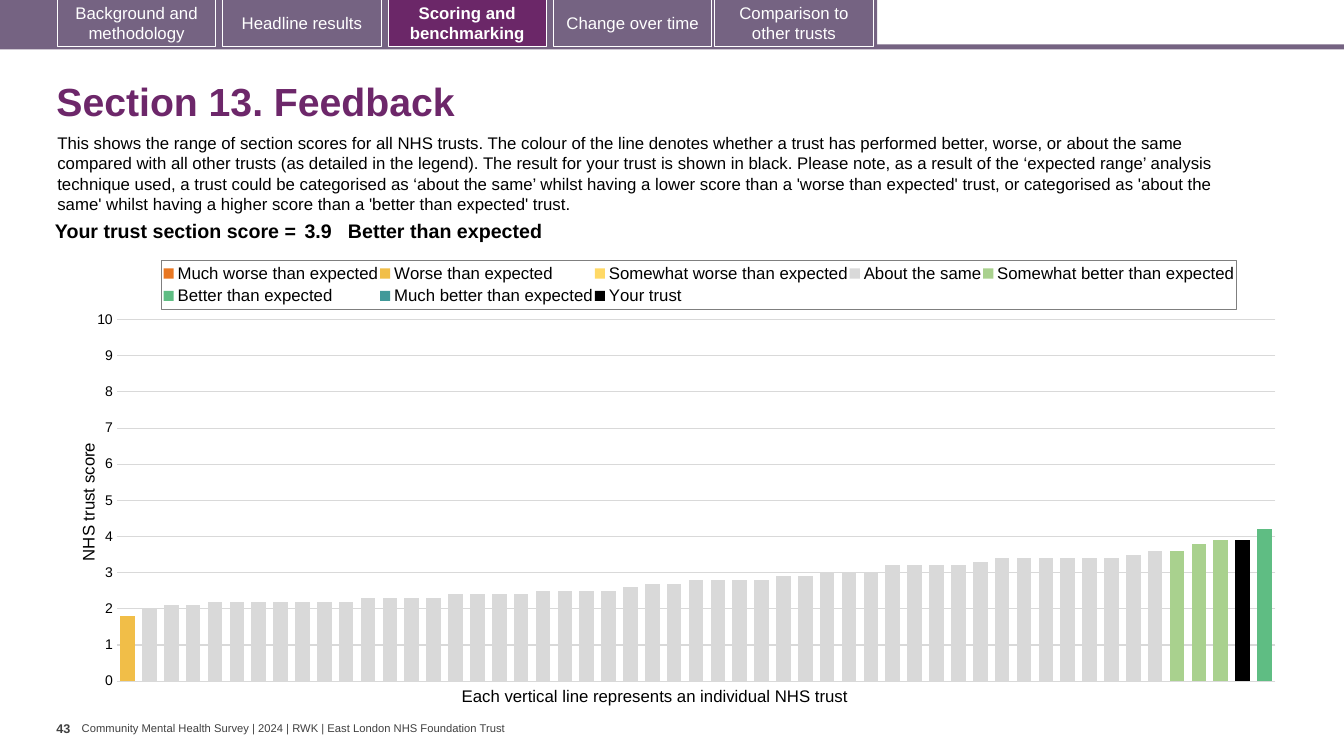
import copy
import pptx
import pptx.chart.data
import pptx.dml.color
import pptx.enum.chart
import pptx.enum.shapes
import pptx.enum.text
import pptx.oxml
import pptx.oxml.ns
import pptx.util

RGB = pptx.dml.color.RGBColor
QN = pptx.oxml.ns.qn
PT = pptx.util.Pt
ALIGN = pptx.enum.text.PP_ALIGN
MID = pptx.enum.text.MSO_ANCHOR.MIDDLE
XL = pptx.enum.chart

BLACK, WHITE, GREY = RGB(0, 0, 0), RGB(255, 255, 255), RGB(0x40, 0x40, 0x40)
BAR, LIVE, HEAD = RGB(0x75, 0x63, 0x82), RGB(0x6B, 0x27, 0x68), RGB(0x6D, 0x27, 0x6A)
GRID = RGB(0xD9, 0xD9, 0xD9)

# Content
TITLE = "Section 13. Feedback"
INTRO = (
    "This shows the range of section scores for all NHS trusts. The colour of the line denotes "
    "whether a trust has performed better, worse, or about the same compared with all other trusts "
    "(as detailed in the legend). The result for your trust is shown in black. Please note, as a "
    "result of the ‘expected range’ analysis technique used, a trust could be categorised as "
    "‘about the same’ whilst having a lower score than a 'worse than expected' trust, or categorised "
    "as 'about the same' whilst having a higher score than a 'better than expected' trust.")
AXIS = "NHS trust score"
NOTE = "Each vertical line represents an individual NHS trust"
PAGE = "43"
FOOT = "Community Mental Health Survey | 2024 | RWK | East London NHS Foundation Trust"
ACTIVE = "Scoring and benchmarking"
# Tab label, left edge
TABS = [("Background and methodology", 4.28), ("Headline results", 16.58), (ACTIVE, 28.88),
        ("Change over time", 41.19), ("Comparison to other trusts", 53.19)]
# Text, column width, alignment, side margin in inches
SCORE = [("Your trust section score =", 19.73, ALIGN.RIGHT, 0.04),
         ("3.9", 3.53, ALIGN.LEFT, 0.04),
         ("Better than expected", 64.44, ALIGN.LEFT, 0)]
COUNT = 53
SAME = ([2] + [2.1] * 2 + [2.2] * 7 + [2.3] * 4 + [2.4] * 4 + [2.5] * 4 + [2.6] + [2.7] * 2
        + [2.8] * 4 + [2.9] * 2 + [3] * 3 + [3.2] * 4 + [3.3] + [3.4] * 6 + [3.5, 3.6])
# Series name, colour, rank of its first trust, scores
SERIES = [("Much worse than expected", RGB(0xE8, 0x77, 0x22), 0, []),
          ("Worse than expected", RGB(0xF1, 0xBE, 0x48), 0, [1.8]),
          ("Somewhat worse than expected", RGB(0xFF, 0xD9, 0x66), 0, []),
          ("About the same", GRID, 1, SAME),
          ("Somewhat better than expected", RGB(0xA9, 0xD1, 0x8E), 48, [3.6, 3.8, 3.9]),
          ("Better than expected", RGB(0x5F, 0xBD, 0x83), 51, [3.9, 4.2]),
          ("Much better than expected", RGB(0x41, 0x99, 0x99), 0, []),
          ("Your trust", BLACK, 51, [3.9])]

deck = pptx.Presentation()
deck.slide_width, deck.slide_height = pptx.util.Inches(13.33), pptx.util.Inches(7.5)
slide = deck.slides.add_slide(deck.slide_layouts[5])
shapes = slide.shapes


def across(share):
    return int(deck.slide_width * share / 100)


def place(x, y, w, h):
    """Percent shares of the slide to lengths."""
    return (across(x), int(deck.slide_height * y / 100),
            across(w), int(deck.slide_height * h / 100))


def style(font, size, color, bold=False):
    font.name, font.size, font.bold = "Arial", PT(size), bold
    font.color.rgb = color


def rect(spot, fill):
    shape = shapes.add_shape(pptx.enum.shapes.MSO_SHAPE.RECTANGLE, *place(*spot))
    shape.shadow.inherit = False
    shape.fill.solid()
    shape.fill.fore_color.rgb = fill
    shape.line.fill.background()
    return shape


def label(spot, text, size, color, bold=False, wrap=False, inset=None):
    frame = shapes.add_textbox(*place(*spot)).text_frame
    frame.word_wrap = wrap
    if inset is not None:
        frame.margin_left = frame.margin_right = 0
        frame.margin_top = frame.margin_bottom = pptx.util.Inches(inset)
    para = frame.paragraphs[0]
    para.text = text
    style(para.font, size, color, bold)
    return frame


# Title
title = shapes.title
title.left, title.top, title.width, title.height = place(3.45, 8.93, 93.7, 9.6)
title.text_frame.text = TITLE
title.text_frame.vertical_anchor = MID
para = title.text_frame.paragraphs[0]
para.alignment, para.line_spacing = ALIGN.LEFT, 0.9
style(para.font, 28, HEAD, True)

# Navigation tabs
rect((0, 5.87, 100, 0.67), BAR)
rect((0, 0, 65.27, 6.27), BAR)
for text, left in TABS:
    live = text == ACTIVE
    tab = rect((left, -0.13, 11.78, 6.27), LIVE if live else BAR)
    tab.line.color.rgb, tab.line.width = WHITE, PT(0.75)
    frame = tab.text_frame
    frame.word_wrap, frame.vertical_anchor = True, MID
    para = frame.paragraphs[0]
    para.text, para.alignment = text, ALIGN.CENTER
    style(para.font, 12, WHITE, live)

# Chart
data = pptx.chart.data.CategoryChartData()
data.categories = [str(n + 1) for n in range(COUNT)]
for name, _, first, vals in SERIES:
    data.add_series(name, [None] * first + vals + [None] * (COUNT - first - len(vals)))
chart = shapes.add_chart(XL.XL_CHART_TYPE.COLUMN_CLUSTERED,
                         *place(5.03, 32.93, 91.15, 59.2), data).chart
chart.has_title = False
chart.font.name, chart.font.size = "Calibri", PT(10)
chart.font.color.rgb = BLACK
plot = chart.plots[0]
plot.gap_width, plot.overlap, plot.vary_by_categories = 50, 100, False
for item, (_, color, _, _) in zip(plot.series, SERIES):
    item.format.fill.solid()
    item.format.fill.fore_color.rgb = color
    item.invert_if_negative = False

chart.category_axis.visible = False
axis = chart.value_axis
axis.minimum_scale, axis.maximum_scale, axis.major_unit = 0, 10, 1
axis.major_tick_mark = axis.minor_tick_mark = XL.XL_TICK_MARK.NONE
axis.format.line.fill.background()
axis.major_gridlines.format.line.color.rgb = GRID
axis.major_gridlines.format.line.width = PT(0.75)
axis.tick_labels.number_format, axis.tick_labels.number_format_is_linked = "0", False
style(axis.tick_labels.font, 10, BLACK)
axis.axis_title.text_frame.text = AXIS
style(axis.axis_title.text_frame.paragraphs[0].font, 12, BLACK)

chart.has_legend = True
legend = chart.legend
legend.position, legend.include_in_layout = XL.XL_LEGEND_POSITION.TOP, False
style(legend.font, 12, BLACK)

# Legend border and manual layouts
NS = pptx.oxml.ns.nsdecls("c", "a")
root = chart._chartSpace
area, key = (root.find(".//" + QN(tag)) for tag in ("c:plotArea", "c:legend"))
key.find(QN("c:overlay")).addnext(pptx.oxml.parse_xml(
    f'<c:spPr {NS}><a:ln w="9525"><a:solidFill><a:srgbClr val="7F7F7F"/></a:solidFill></a:ln></c:spPr>'))


def layout(owner, index, target="", **sizes):
    for old in owner.findall(QN("c:layout")):
        owner.remove(old)
    tags = [("layoutTarget", target)] if target else []
    tags += [("xMode", "edge"), ("yMode", "edge")] + list(sizes.items())
    body = "".join(f'<c:{tag} val="{val}"/>' for tag, val in tags)
    owner.insert(index, pptx.oxml.parse_xml(
        f"<c:layout {NS}><c:manualLayout>{body}</c:manualLayout></c:layout>"))


layout(area, 0, "inner", x=0.04, y=0.158, w=0.946, h=0.808)
layout(key, 1, x=0.077, y=0.025, w=0.877, h=0.11)
layout(area.find(QN("c:valAx")).find(QN("c:title")), 1, x=0.006, y=0.426)

# Second axis for the last series
bars = area.find(QN("c:barChart"))
front = copy.deepcopy(bars)
bars.remove(bars.findall(QN("c:ser"))[-1])
for item in front.findall(QN("c:ser"))[:-1]:
    front.remove(item)
bars.addnext(front)
cat, val = (copy.deepcopy(area.find(QN(tag))) for tag in ("c:catAx", "c:valAx"))
area.find(QN("c:valAx")).addnext(val)
val.addnext(cat)
ids = {cat.find(QN("c:axId")).get("val"): "501", val.find(QN("c:axId")).get("val"): "502"}
for part in (front, cat, val):
    for tag in ("c:axId", "c:crossAx"):
        for node in part.findall(QN(tag)):
            node.set("val", ids[node.get("val")])
for tag in ("c:majorGridlines", "c:title"):
    val.remove(val.find(QN(tag)))
for tag, value in (("c:axPos", "r"), ("c:tickLblPos", "none"), ("c:majorTickMark", "out"),
                   ("c:crosses", "max")):
    val.find(QN(tag)).set("val", value)

# Score row
frame = shapes.add_table(1, len(SCORE), *place(2.63, 28.67, 87.7, 4.13))
table = frame.table
table.first_row = table.horz_banding = False
for n, (text, width, align, side) in enumerate(SCORE):
    table.columns[n].width = across(width)
    cell = table.cell(0, n)
    cell.fill.background()
    cell.margin_left = cell.margin_right = pptx.util.Inches(side)
    cell.margin_top = cell.margin_bottom = pptx.util.Inches(0.04)
    para = cell.text_frame.paragraphs[0]
    para.text, para.alignment = text, align
    style(para.font, 14, BLACK, True)

# Intro, chart note and footer
label((3.53, 16.93, 91, 12.13), INTRO, 12, BLACK, wrap=True)
label((33.61, 90, 30.83, 4), NOTE, 12, BLACK)
label((4.2, 94.67, 1.88, 5.33), PAGE, 9, GREY, True, inset=0.05)
label((6.08, 95.47, 31.96, 1.73), FOOT, 8, GREY, inset=0).vertical_anchor = MID

deck.save("out.pptx")
